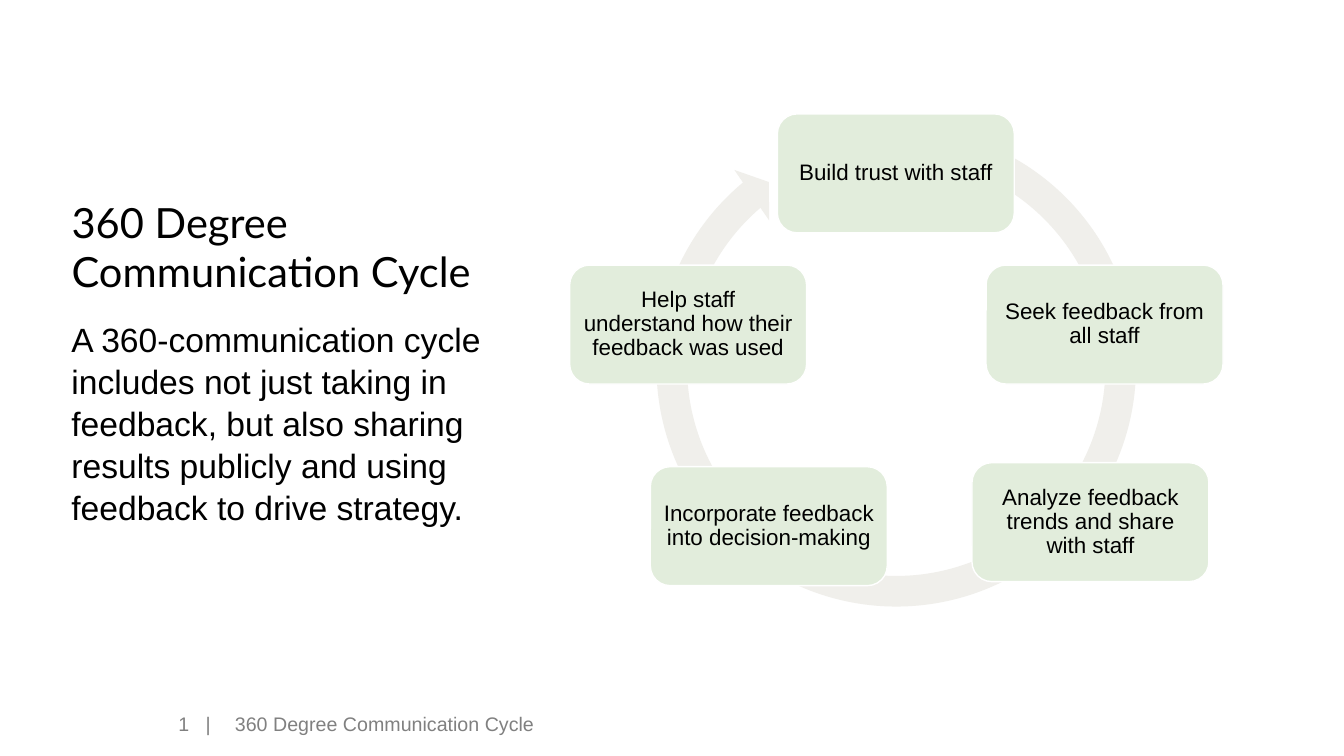
from lxml import etree
from pptx import Presentation
from pptx import util as u
from pptx.dml.color import RGBColor
from pptx.enum import shapes, text
from pptx.oxml.ns import qn

EMU_PER_PX = 9144
BLACK = RGBColor(0x00, 0x00, 0x00)
GRAY = RGBColor(0x80, 0x80, 0x80)
WHITE = RGBColor(0xFF, 0xFF, 0xFF)
STONE = RGBColor(0xF0, 0xEF, 0xEB)
SAGE = RGBColor(0xE2, 0xED, 0xDC)

HEADING = "360 Degree Communication Cycle"
SUMMARY = (
    "A 360-communication cycle includes not just taking in feedback, "
    "but also sharing results publicly and using feedback to drive strategy."
)
STEP_SIZE = (235, 118)
STEPS = [
    (771, 113, "Build trust with staff"),
    (978, 263, "Seek feedback from all staff"),
    (964, 459, "Analyze feedback trends and share with staff"),
    (645, 463, "Incorporate feedback into decision-making"),
    (565, 263, "Help staff understand how their feedback was used"),
]


def px(value):
    return u.Emu(value * EMU_PER_PX)


class CycleSlide:
    title_font = "Lato"
    body_font = "Arial"

    def __init__(self, presentation):
        self.slide = presentation.slides.add_slide(presentation.slide_layouts[5])

    def set_text(self, shape, wording, size, color=BLACK, font=None, inset=(10, 5),
                 anchor=text.MSO_ANCHOR.TOP, align=text.PP_ALIGN.LEFT, spacing=1.0, tab=None):
        frame = shape.text_frame
        frame.text = wording
        frame.word_wrap = True
        frame.auto_size = text.MSO_AUTO_SIZE.NONE
        frame.vertical_anchor = anchor
        frame.margin_left = frame.margin_right = px(inset[0])
        frame.margin_top = frame.margin_bottom = px(inset[1])
        paragraph = frame.paragraphs[0]
        paragraph.alignment = align
        paragraph.line_spacing = spacing
        if tab:
            properties = paragraph._p.get_or_add_pPr()
            tabs = etree.SubElement(properties, qn("a:tabLst"))
            etree.SubElement(tabs, qn("a:tab"), pos=str(px(tab)), algn="l")
        for run in paragraph.runs:
            run.font.name = font or self.body_font
            run.font.size = u.Pt(size)
            run.font.color.rgb = color

    def title(self, left, top, width, height, wording):
        shape = self.slide.shapes.title
        shape.left, shape.top, shape.width, shape.height = map(px, (left, top, width, height))
        self.set_text(shape, wording, 29.7, font=self.title_font, anchor=text.MSO_ANCHOR.BOTTOM)

    def textbox(self, left, top, width, height, wording, size, **style):
        shape = self.slide.shapes.add_textbox(*map(px, (left, top, width, height)))
        self.set_text(shape, wording, size, **style)

    def shape(self, kind, left, top, width, height, fill):
        shape = self.slide.shapes.add_shape(kind, *map(px, (left, top, width, height)))
        shape.shadow.inherit = False
        shape.fill.solid()
        shape.fill.fore_color.rgb = fill
        shape.line.fill.background()
        return shape

    def ring(self, left, top, size, adjustments):
        kind = shapes.MSO_SHAPE.CIRCULAR_ARROW
        ring = self.shape(kind, left, top, size, size, STONE)
        for index, value in enumerate(adjustments):
            ring.adjustments[index] = value

    def step(self, left, top, wording):
        kind = shapes.MSO_SHAPE.ROUNDED_RECTANGLE
        step = self.shape(kind, left, top, *STEP_SIZE, SAGE)
        step.line.color.rgb = WHITE
        step.line.width = u.Pt(1)
        self.set_text(step, wording, 16, inset=(7, 7), anchor=text.MSO_ANCHOR.MIDDLE,
                      align=text.PP_ALIGN.CENTER, spacing=0.9)


def main():
    presentation = Presentation()
    presentation.slide_width, presentation.slide_height = px(1333), px(750)
    cycle = CycleSlide(presentation)
    cycle.title(61, 176, 461, 123, HEADING)
    cycle.textbox(61, 310, 461, 311, SUMMARY, 24, spacing=1.04)
    cycle.textbox(233, 706, 318, 20, HEADING, 14, color=GRAY, inset=(0, 0))
    cycle.textbox(177, 706, 46, 20, "1\t|", 14, color=GRAY, inset=(0, 0), tab=27)
    cycle.ring(636, 111, 506, (0.06, 3.31, 137.95, 173.74, 0.06))
    for left, top, wording in STEPS:
        cycle.step(left, top, wording)
    presentation.save("out.pptx")


if __name__ == "__main__":
    main()
